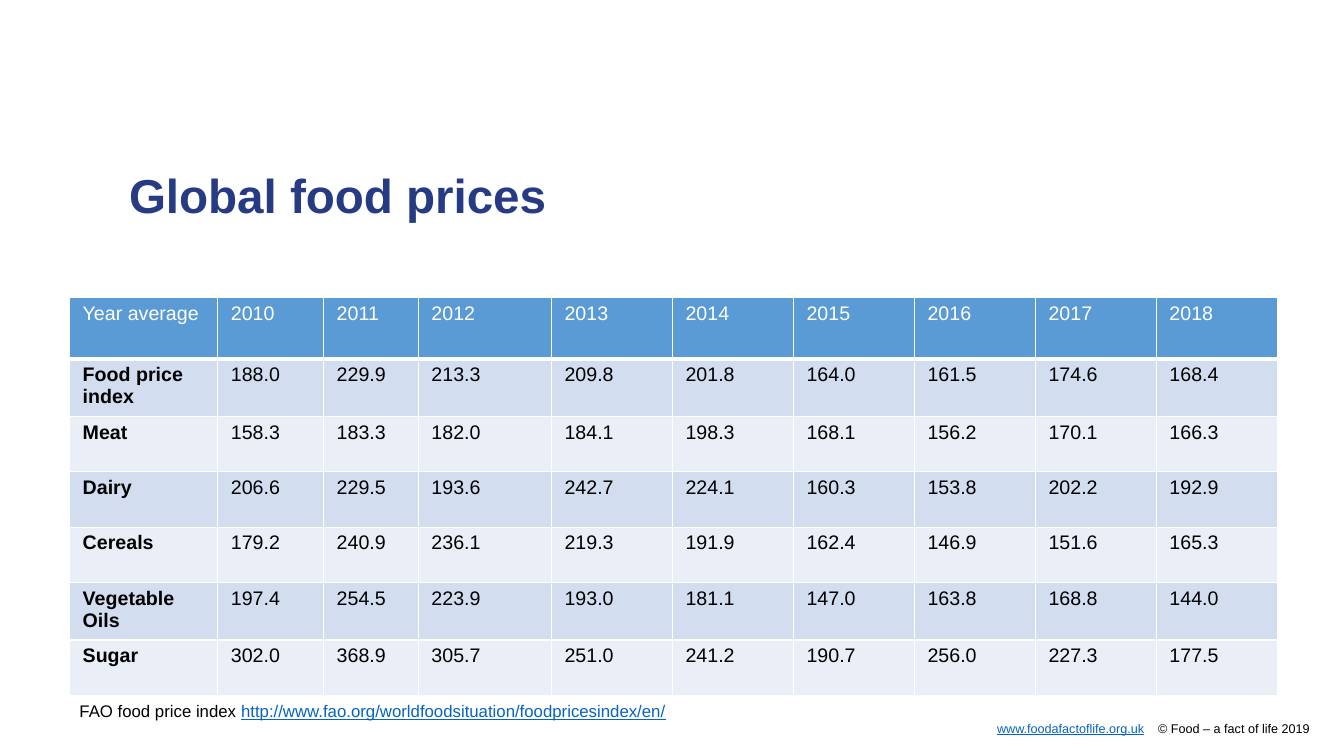
import pptx
import pptx.dml.color
import pptx.enum.text
import pptx.util
from lxml import etree
from pptx.oxml.ns import qn

Inches = pptx.util.Inches
RGBColor = pptx.dml.color.RGBColor

NAVY = RGBColor(0x26, 0x3B, 0x83)
BLUE = RGBColor(0x5B, 0x9B, 0xD5)
PALE_BLUE = RGBColor(0xD2, 0xDE, 0xEF)
PALER_BLUE = RGBColor(0xEA, 0xEF, 0xF7)
LINK_BLUE = RGBColor(0x05, 0x63, 0xC1)
BLACK = RGBColor(0, 0, 0)
WHITE = RGBColor(0xFF, 0xFF, 0xFF)

COLUMN_WIDTHS = [1.47, 1.05, 0.94, 1.32] + [1.2] * 6
ROW_HEIGHTS = [0.61, 0.57, 0.55, 0.55, 0.55, 0.57, 0.55]
PRICES = [
    ["Year average"] + [str(year) for year in range(2010, 2019)],
    ["Food price index", "188.0", "229.9", "213.3", "209.8", "201.8", "164.0", "161.5", "174.6", "168.4"],
    ["Meat", "158.3", "183.3", "182.0", "184.1", "198.3", "168.1", "156.2", "170.1", "166.3"],
    ["Dairy", "206.6", "229.5", "193.6", "242.7", "224.1", "160.3", "153.8", "202.2", "192.9"],
    ["Cereals", "179.2", "240.9", "236.1", "219.3", "191.9", "162.4", "146.9", "151.6", "165.3"],
    ["Vegetable Oils", "197.4", "254.5", "223.9", "193.0", "181.1", "147.0", "163.8", "168.8", "144.0"],
    ["Sugar", "302.0", "368.9", "305.7", "251.0", "241.2", "190.7", "256.0", "227.3", "177.5"],
]


def add_run(paragraph, text, size, color, bold=False, underline=False):
    run = paragraph.add_run()
    run.text = text
    run.font.name = "Arial"
    run.font.size = pptx.util.Pt(size)
    run.font.color.rgb = color
    run.font.bold = bold
    run.font.underline = underline
    return run


def add_border(cell, side, width):
    line = etree.SubElement(cell._tc.get_or_add_tcPr(), qn("a:ln" + side), w=str(pptx.util.Pt(width)))
    fill = etree.SubElement(line, qn("a:solidFill"))
    etree.SubElement(fill, qn("a:srgbClr"), val=str(WHITE))


presentation = pptx.Presentation()
presentation.slide_width = Inches(13.33)
presentation.slide_height = Inches(7.5)
slide = presentation.slides.add_slide(presentation.slide_layouts[5])

title = slide.shapes.title
title.left, title.top, title.width, title.height = Inches(1.28), Inches(1.71), Inches(10.63), Inches(0.79)
title_frame = title.text_frame
title_frame.margin_left = title_frame.margin_right = 0
title_frame.margin_top = title_frame.margin_bottom = 0
title_frame.vertical_anchor = pptx.enum.text.MSO_ANCHOR.TOP
title_paragraph = title_frame.paragraphs[0]
title_paragraph.alignment = pptx.enum.text.PP_ALIGN.LEFT
title_paragraph.line_spacing = 0.9
add_run(title_paragraph, "Global food prices", 34, NAVY, bold=True)

table = slide.shapes.add_table(
    len(ROW_HEIGHTS), len(COLUMN_WIDTHS), Inches(0.69), Inches(2.95), Inches(11.98), Inches(3.95)
).table
for column, width in zip(table.columns, COLUMN_WIDTHS):
    column.width = Inches(width)
for row, height in zip(table.rows, ROW_HEIGHTS):
    row.height = Inches(height)

for row_index, values in enumerate(PRICES):
    is_header = row_index == 0
    row_fill = BLUE if is_header else PALE_BLUE if row_index % 2 else PALER_BLUE
    for column_index, value in enumerate(values):
        cell = table.cell(row_index, column_index)
        cell.margin_left = cell.margin_right = Inches(0.13)
        cell.margin_top = cell.margin_bottom = Inches(0.05)
        for side in "LRTB":
            add_border(cell, side, 3 if is_header and side == "B" else 1)
        cell.fill.solid()
        cell.fill.fore_color.rgb = row_fill
        add_run(
            cell.text_frame.paragraphs[0], value, 14, WHITE if is_header else BLACK,
            bold=column_index == 0 and not is_header,
        )

source_box = slide.shapes.add_textbox(Inches(0.69), Inches(6.9), Inches(9.86), Inches(0.3))
source_box.text_frame.word_wrap = True
source_paragraph = source_box.text_frame.paragraphs[0]
add_run(source_paragraph, "FAO food price index ", 12, BLACK)
add_run(source_paragraph, "http://www.fao.org/worldfoodsituation/foodpricesindex/en/", 12, LINK_BLUE, underline=True)

footer_box = slide.shapes.add_textbox(Inches(1.26), Inches(7.15), Inches(11.73), Inches(0.15))
footer_frame = footer_box.text_frame
footer_frame.word_wrap = True
footer_frame.margin_left = footer_frame.margin_right = 0
footer_frame.margin_top = footer_frame.margin_bottom = 0
footer_paragraph = footer_frame.paragraphs[0]
footer_paragraph.alignment = pptx.enum.text.PP_ALIGN.RIGHT
add_run(footer_paragraph, "www.foodafactoflife.org.uk", 9, LINK_BLUE, underline=True)
footer_gap = add_run(footer_paragraph, " ", 9, BLACK)
footer_gap.font._element.set("spc", "750")
add_run(footer_paragraph, "© Food – a fact of life 2019", 9, BLACK)

presentation.save("out.pptx")
